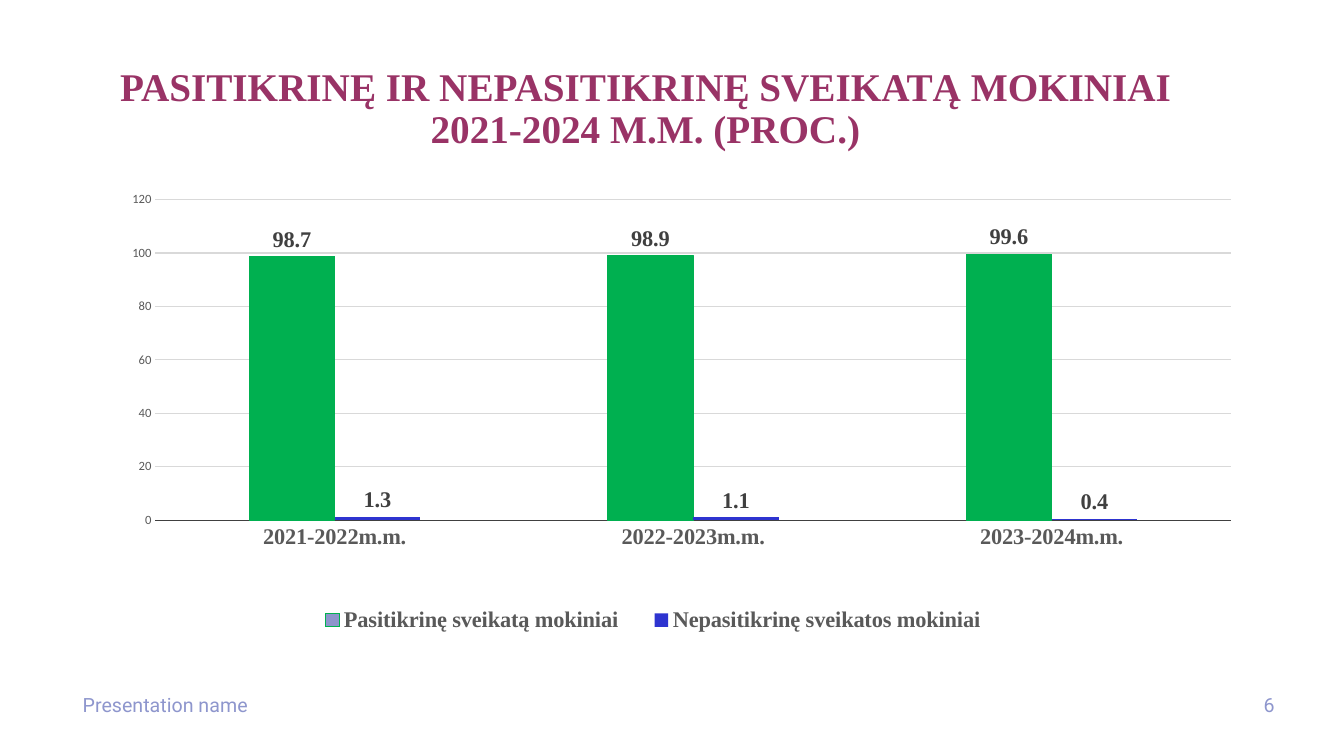
from dataclasses import dataclass

from lxml import etree
from pptx import Presentation
from pptx import util as u
from pptx.chart import data as chart_data
from pptx.dml import color
from pptx.enum import chart as charts, text
from pptx.oxml import ns


@dataclass(frozen=True)
class Theme:
    serif: str = "Times New Roman"
    sans: str = "Roboto"
    axis_font: str = "Calibri"
    title: str = "993366"
    footer: str = "8E96CD"
    axis_text: str = "595959"
    label: str = "404040"
    grid: str = "D9D9D9"
    checked: str = "00B050"
    checked_key: str = "8D95CC"
    unchecked: str = "2E34D0"
    title_size: int = 28
    chart_size: int = 16
    footer_size: int = 14
    axis_size: int = 9


THEME = Theme()
YEARS = ["2021-2022m.m.", "2022-2023m.m.", "2023-2024m.m."]
CHECKED = [98.7, 98.9, 99.6]
UNCHECKED = [1.3, 1.1, 0.4]


def rgb(value):
    return color.RGBColor.from_string(value)


def set_font(font, name, size, fill, bold=False):
    font.name, font.size, font.bold = name, u.Pt(size), bold
    font.color.rgb = rgb(fill)


def set_fill(fill, value):
    fill.solid()
    fill.fore_color.rgb = rgb(value)


def set_line(line, value):
    set_fill(line.fill, value)
    line.width = u.Pt(0.75)


def write(shape, words, *, font, size, fill, bold=False,
          align=text.PP_ALIGN.LEFT, spacing=1.0):
    frame = shape.text_frame
    frame.word_wrap = True
    frame.auto_size = text.MSO_AUTO_SIZE.NONE
    frame.vertical_anchor = text.MSO_ANCHOR.MIDDLE
    para = frame.paragraphs[0]
    para.text = words
    para.alignment, para.line_spacing = align, spacing
    for span in para.runs:
        set_font(span.font, font, size, fill, bold)


def place(shape, box):
    shape.left, shape.top, shape.width, shape.height = map(u.Pt, box)


def set_layout(parent, index, x, y, w, h, inner=False):
    """Fix a chart part's place, as fractions of the chart frame."""
    for old in parent.findall(ns.qn("c:layout")):
        parent.remove(old)
    layout = etree.Element(ns.qn("c:layout"))
    manual = etree.SubElement(layout, ns.qn("c:manualLayout"))
    settings = [("xMode", "edge"), ("yMode", "edge"),
                ("x", x), ("y", y), ("w", w), ("h", h)]
    if inner:
        settings.insert(0, ("layoutTarget", "inner"))
    for tag, value in settings:
        etree.SubElement(manual, ns.qn(f"c:{tag}")).set("val", str(value))
    parent.insert(index, layout)


def add_title(page, box):
    title = page.shapes.title
    place(title, box)
    write(title,
          "PASITIKRINĘ IR NEPASITIKRINĘ SVEIKATĄ MOKINIAI\v2021-2024 M.M. (PROC.)",
          font=THEME.serif, size=THEME.title_size, fill=THEME.title, bold=True,
          align=text.PP_ALIGN.CENTER, spacing=0.9)


def add_footer(page, box):
    left, top, width, height = box
    number_width = 38
    parts = [
        ("Presentation name", left, 454, text.PP_ALIGN.LEFT),
        ("6", left + width - number_width, number_width, text.PP_ALIGN.RIGHT),
    ]
    for words, x, part_width, align in parts:
        part = page.shapes.add_textbox(*map(u.Pt, (x, top, part_width, height)))
        write(part, words, font=THEME.sans, size=THEME.footer_size,
              fill=THEME.footer, align=align)


def style_axes(chart):
    years, values = chart.category_axis, chart.value_axis
    for axis in (years, values):
        axis.major_tick_mark = axis.minor_tick_mark = charts.XL_TICK_MARK.NONE
    set_font(years.tick_labels.font, THEME.serif, THEME.chart_size,
             THEME.axis_text, bold=True)
    set_line(years.format.line, THEME.label)
    set_font(values.tick_labels.font, THEME.axis_font, THEME.axis_size,
             THEME.axis_text)
    values.minimum_scale, values.maximum_scale, values.major_unit = 0, 120, 20
    values.format.line.fill.background()
    set_line(values.major_gridlines.format.line, THEME.grid)


def style_series(plot):
    plot.gap_width, plot.overlap, plot.vary_by_categories = 219, 0, False
    checked, unchecked = plot.series
    set_fill(checked.format.fill, THEME.checked_key)
    set_line(checked.format.line, THEME.checked)
    set_fill(unchecked.format.fill, THEME.unchecked)
    for index in range(len(YEARS)):
        bar = checked.points[index].format
        set_fill(bar.fill, THEME.checked)
        set_line(bar.line, THEME.checked)
    for series in plot.series:
        series.invert_if_negative = False
        labels = series.data_labels
        labels.show_value = True
        labels.position = charts.XL_LABEL_POSITION.OUTSIDE_END
        set_font(labels.font, THEME.serif, THEME.chart_size, THEME.label, bold=True)


def add_health_chart(page, box):
    data = chart_data.CategoryChartData(number_format="General")
    data.categories = YEARS
    data.add_series("Pasitikrinę sveikatą mokiniai", CHECKED)
    data.add_series("Nepasitikrinę sveikatos mokiniai", UNCHECKED)
    chart = page.shapes.add_chart(
        charts.XL_CHART_TYPE.COLUMN_CLUSTERED, *map(u.Pt, box), data).chart
    chart.has_title = False
    set_font(chart.font, THEME.axis_font, 10, "000000")
    style_axes(chart)
    style_series(chart.plots[0])
    chart.has_legend = True
    legend = chart.legend
    legend.position = charts.XL_LEGEND_POSITION.BOTTOM
    legend.include_in_layout = False
    set_font(legend.font, THEME.serif, THEME.chart_size, THEME.axis_text, bold=True)
    plot_area = chart.plots[0]._element.getparent()
    set_layout(plot_area, 0, 0.035, 0.024, 0.951, 0.687, inner=True)
    set_layout(legend._element, 1, 0.16, 0.88, 0.63, 0.09)


def main():
    deck = Presentation()
    deck.slide_width, deck.slide_height = u.Pt(960), u.Pt(540)
    page = deck.slides.add_slide(deck.slide_layouts[5])
    add_title(page, (52, 42.5, 818, 71.5))
    add_health_chart(page, (82.8, 134.6, 807.8, 333.4))
    add_footer(page, (52, 489, 865.5, 28))
    deck.save("out.pptx")


if __name__ == "__main__":
    main()
